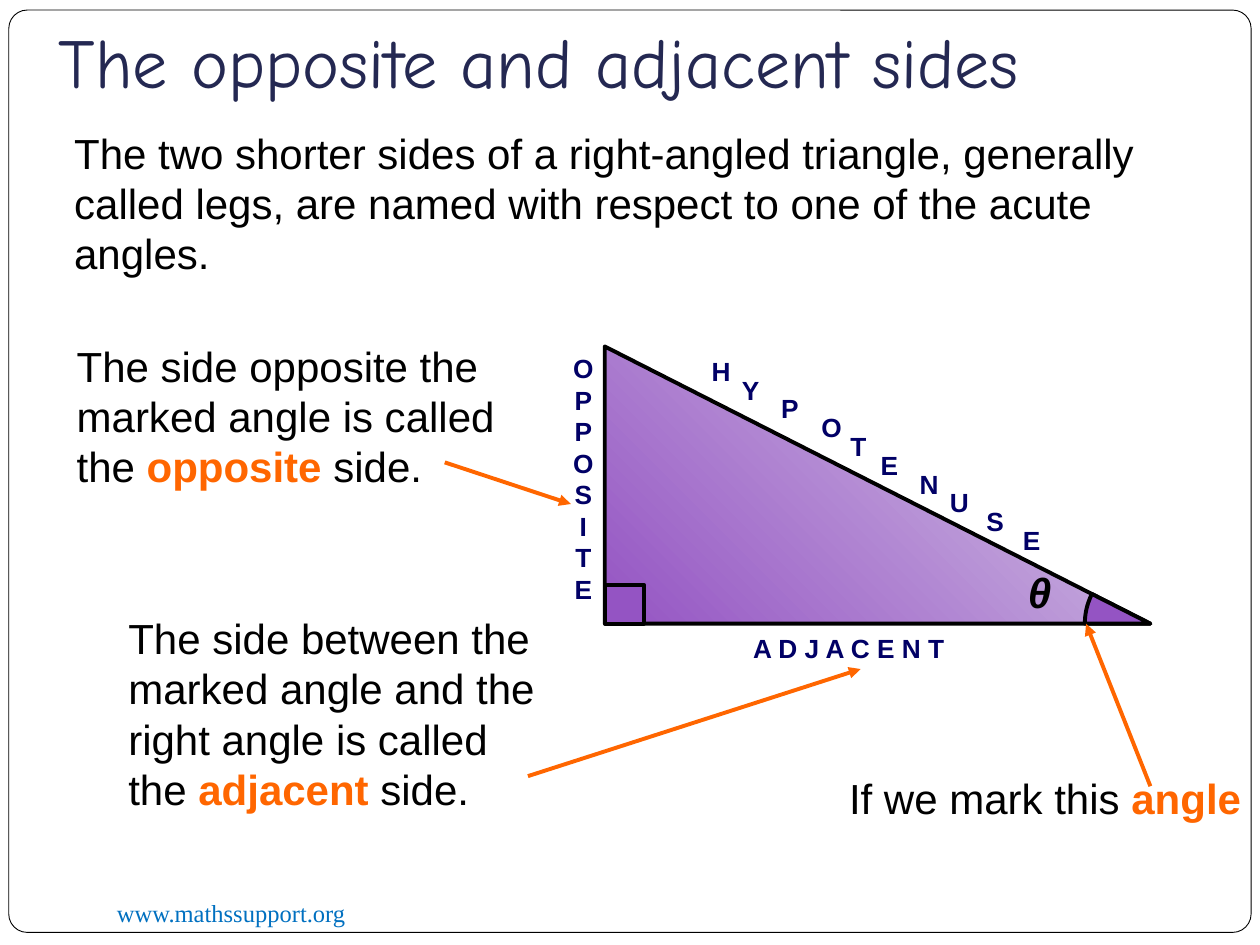
from math import atan2, cos, sin

from lxml.etree import SubElement
from pptx import Presentation
from pptx.dml.color import RGBColor
from pptx.enum.shapes import MSO_CONNECTOR as CONN, MSO_SHAPE as SHAPE
from pptx.enum.text import MSO_ANCHOR as ANCHOR, PP_ALIGN as ALIGN
from pptx.oxml.ns import qn
from pptx.util import Inches, Pt

COLORS = {
    "white": "FFFFFF", "black": "000000", "title": "242852", "link": "0070C0",
    "accent": "FF6600", "purple": "9454C3", "lilac": "D8CBE7", "label": "010066",
}


def rgb(name):
    return RGBColor.from_string(COLORS[name])


class TriangleSlide:
    """Holds the style and the current slide, with a method per kind of element."""

    font, body_size, label_size, stroke = "Arial", 24, 15, 2.25

    def __init__(self, prs):
        self.s = prs.slides.add_slide(prs.slide_layouts[6])

    def text(self, box, paragraphs, size=None, color="black", font=None, bold=False,
             italic=False, wrap=True, align=ALIGN.LEFT):
        tf = self.s.shapes.add_textbox(*map(Inches, box)).text_frame
        tf.word_wrap = wrap
        tf.text = "\n".join(paragraphs)
        for p in tf.paragraphs:
            p.alignment = align
            for r in p.runs:
                self.style(r, size or self.body_size, color, font, bold, italic)
        return tf

    def style(self, r, size, color, font=None, bold=False, italic=False):
        r.font.name = font or self.font
        r.font.size = Pt(size)
        r.font.bold = bold
        r.font.italic = italic
        r.font.color.rgb = rgb(color)

    def sentence(self, box, before, key, after=""):
        p = self.text(box, [before]).paragraphs[0]
        for part, color in ((key, "accent"), (after, "black")):
            if part:
                r = p.add_run()
                r.text = part
                self.style(r, self.body_size, color, bold=part == key)

    def label(self, box, paragraphs, align=ALIGN.LEFT):
        self.text(box, paragraphs, self.label_size, "label", bold=True, wrap=False, align=align)

    def paint(self, sp, fill, width):
        sp.shadow.inherit = False
        sp.fill.solid()
        sp.fill.fore_color.rgb = rgb(fill)
        sp.line.color.rgb = rgb("black")
        sp.line.width = Pt(width)

    def shape(self, kind, box, fill, width=None):
        sp = self.s.shapes.add_shape(kind, *map(Inches, box))
        self.paint(sp, fill, width or self.stroke)
        return sp

    def gradient(self, sp, colors, angle):
        sp.fill.gradient()
        sp.fill.gradient_angle = angle
        for stop, color in zip(sp.fill.gradient_stops, colors):
            stop.color.rgb = rgb(color)

    def wedge(self, x, y, radius, angle, fill, steps=12):
        points = [(Inches(x - radius * cos(angle * i / steps)),
                   Inches(y - radius * sin(angle * i / steps))) for i in range(steps + 1)]
        builder = self.s.shapes.build_freeform(Inches(x), Inches(y))
        builder.add_line_segments(points, close=True)
        self.paint(builder.convert_to_shape(), fill, self.stroke)

    def arrow(self, start, end):
        c = self.s.shapes.add_connector(CONN.STRAIGHT, *map(Inches, start + end))
        c.line.color.rgb = rgb("accent")
        c.line.width = Pt(self.stroke)
        SubElement(c.line._get_or_add_ln(), qn("a:tailEnd"), type="triangle")
        SubElement(c._element.spPr, qn("a:effectLst"))


def main():
    prs = Presentation()
    prs.slide_width, prs.slide_height = Inches(10), Inches(7.5)
    slide = TriangleSlide(prs)

    frame = slide.shape(SHAPE.ROUNDED_RECTANGLE, (0.07, 0.08, 9.86, 7.32), "white", 0.5)
    frame.adjustments[0] = 0.02
    slide.text((0.83, 7.08, 3.25, 0.34), ["www.mathssupport.org"], 14, "link", "Times New Roman")
    tf = slide.text((0.37, 0.15, 9.37, 0.76), ["The opposite and adjacent sides"],
                    40, "title", "Comic Neue")
    tf.vertical_anchor = ANCHOR.BOTTOM
    tf.margin_bottom = Inches(0.1)

    slide.text((0.49, 0.96, 9.18, 1.31),
               ["The two shorter sides of a right-angled triangle, generally called legs, "
                "are named with respect to one of the acute angles."])
    slide.sentence((0.51, 2.65, 3.69, 1.31),
                   "The side opposite the marked angle is called the ", "opposite", " side.")
    slide.arrow((3.53, 3.67), (4.53, 4))

    left, top, width, height, square = 4.8, 2.75, 4.33, 2.2, 0.31
    right, base = left + width, top + height
    triangle = slide.shape(SHAPE.RIGHT_TRIANGLE, (left, top, width, height), "purple")
    slide.gradient(triangle, ("purple", "lilac"), 45)
    slide.shape(SHAPE.RECTANGLE, (left, base - square, square, square), "purple")
    slide.wedge(right, base, 0.52, atan2(height, width), "purple")

    slide.sentence((0.92, 4.81, 3.58, 1.72),
                   "The side between the marked angle and the right angle is called the ",
                   "adjacent", " side.")
    slide.arrow((4.19, 6.16), (6.83, 5.31))
    slide.text((8.06, 4.45, 0.38, 0.5), ["θ"], bold=True, italic=True, wrap=False)

    letter_lefts = (5.55, 5.79, 6.1, 6.42, 6.65, 6.89, 7.2, 7.44, 7.73, 8.02)
    for i, (letter, x) in enumerate(zip("HYPOTENUSE", letter_lefts)):
        slide.label((x, 2.77 + 1.34 * i / 9, 0.35, 0.35), [letter])
    slide.label((4.45, 2.75, 0.36, 2.1), list("OPPOSITE"), ALIGN.CENTER)
    slide.label((5.88, 4.97, 1.74, 0.35), [" ".join("ADJACENT")])

    slide.sentence((6.64, 6.08, 3.36, 0.5), "If we mark this ", "angle")
    slide.arrow((9.13, 6.24), (8.62, 4.95))
    prs.save("out.pptx")


if __name__ == "__main__":
    main()
